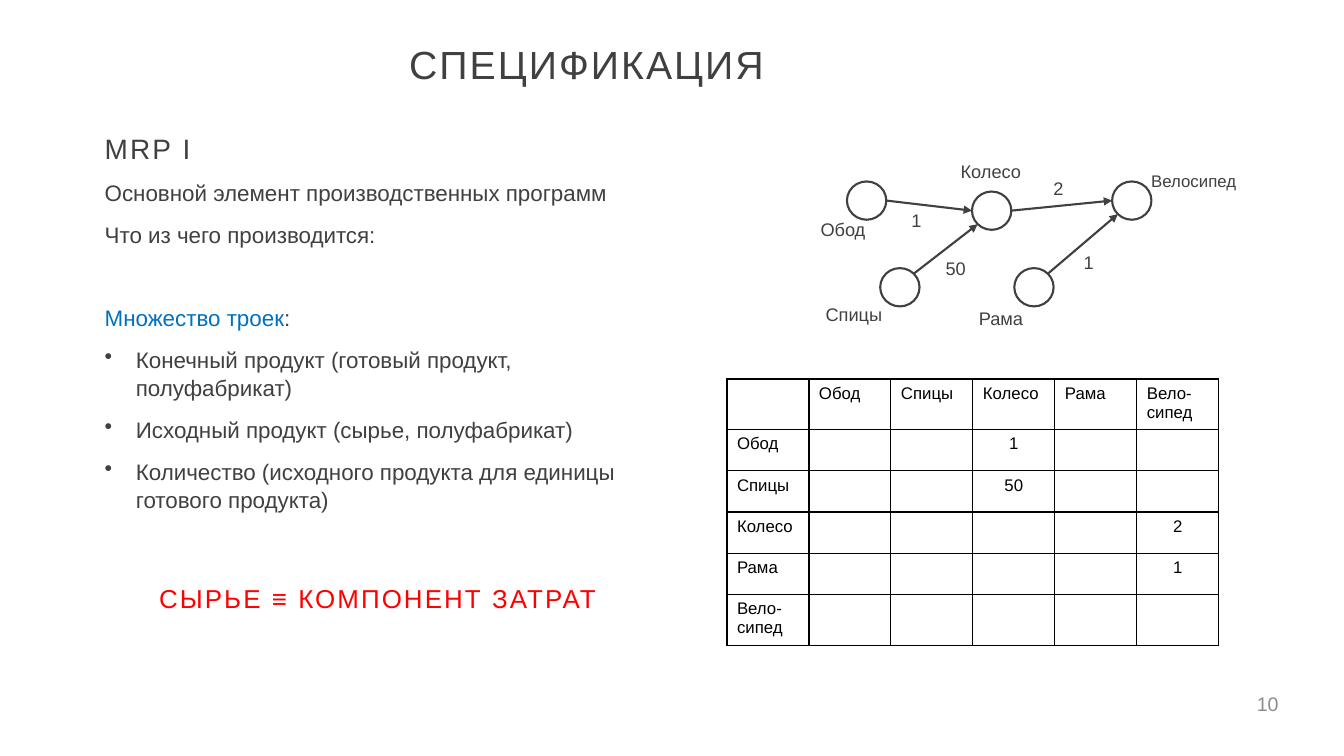
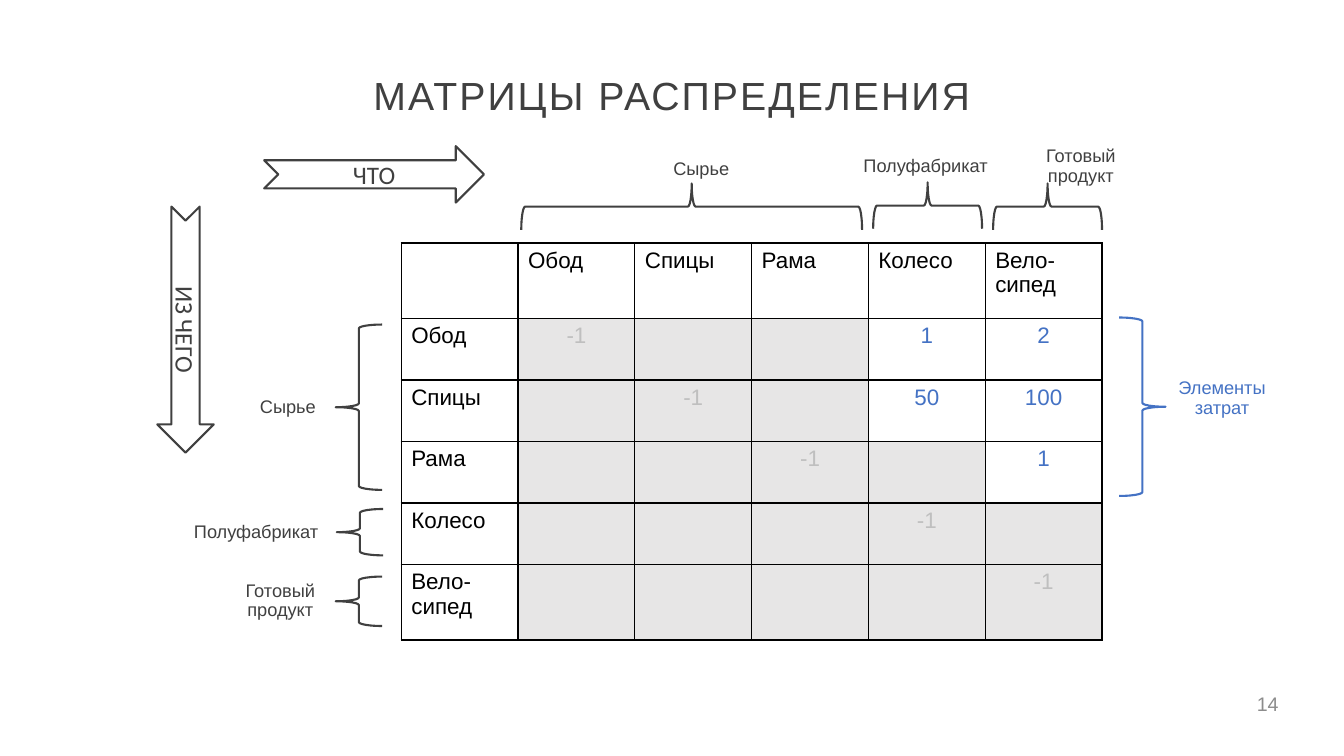
from math import cos, radians, sin

from lxml import etree
from pptx import Presentation
from pptx import util as u
from pptx.dml.color import RGBColor
from pptx.enum import shapes, text
from pptx.oxml import ns

WIDTH, HEIGHT = 13.33, 7.5
INK, BLACK, WHITE, GREY, BLUE = "404040", "000000", "FFFFFF", "E7E6E6", "4472C4"
LINK, RED, FAINT, FOOTER = "0070C0", "FF0000", "BFBFBF", "8C8C8C"
LEFT, CENTER, RIGHT = text.PP_ALIGN.LEFT, text.PP_ALIGN.CENTER, text.PP_ALIGN.RIGHT
KIND = shapes.MSO_SHAPE

# Specification slide
INTRO = ["Основной элемент производственных программ", "Что из чего производится:"]
TRIPLE_HEADING = [("Множество троек", LINK), (":", INK)]
TRIPLE = [
    "Конечный продукт (готовый продукт, полуфабрикат)",
    "Исходный продукт (сырье, полуфабрикат)",
    "Количество (исходного продукта для единицы готового продукта)",
]
NODE_SIZE = (0.39, 0.38)
# name: node left and top, label left, top and width, label size
NODES = {
    "Обод": ((8.4, 1.8), (8.04, 2.12, 0.73), 13),
    "Спицы": ((8.73, 2.66), (8.09, 2.96, 0.83), 13),
    "Колесо": ((9.64, 1.9), (9.43, 1.54, 0.83), 13),
    "Рама": ((10.06, 2.66), (9.61, 3, 0.83), 13),
    "Велосипед": ((11.03, 1.8), (11.32, 1.64, 1.07), 12),
}
# part, product, quantity, quantity left and top, angle at which the arrow leaves
EDGES = [
    ("Обод", "Колесо", "1", (8.94, 2.03), 0),
    ("Спицы", "Колесо", "50", (9.28, 2.5), 45),
    ("Рама", "Велосипед", "1", (10.65, 2.44), 45),
    ("Колесо", "Велосипед", "2", (10.35, 1.71), 0),
]
PARTS = ["Обод", "Спицы", "Колесо", "Рама", "Вело-сипед"]
PART_USE = {(0, 2): "1", (1, 2): "50", (2, 4): "2", (3, 4): "1"}

# Distribution slide
MATRIX_PARTS = ["Обод", "Спицы", "Рама", "Колесо", "Вело-сипед"]
COSTS = {(0, 3): "1", (0, 4): "2", (1, 3): "50", (1, 4): "100", (2, 4): "1"}
# visible box, rotation, colour
BRACES = [
    ((5.17, 1.82, 3.38, 0.46), 90, INK),
    ((8.66, 1.81, 1.08, 0.46), 90, INK),
    ((9.85, 1.82, 1.08, 0.46), 90, INK),
    ((11.1, 3.15, 0.46, 1.77), 180, BLUE),
    ((3.33, 3.22, 0.46, 1.64), 0, INK),
    ((3.34, 5.05, 0.46, 0.46), 0, INK),
    ((3.33, 5.72, 0.46, 0.49), 0, INK),
]
SHORT, LONG, DOUBLE = (0.93, 0.34), (1.58, 0.34), (1.34, 0.49)
# lines, left and top, size, colour
GROUPS = [
    (["Сырье"], (6.49, 1.51), SHORT, INK),
    (["Полуфабрикат"], (8.39, 1.48), LONG, INK),
    (["Готовый", "продукт"], (10.05, 1.41), DOUBLE, INK),
    (["Элементы затрат"], (11.45, 3.71), DOUBLE, BLUE),
    (["Сырье"], (2.39, 3.87), SHORT, INK),
    (["Полуфабрикат"], (1.75, 5.11), LONG, INK),
    (["Готовый", "продукт"], (2.11, 5.72), DOUBLE, INK),
]
ARROWS = [("ЧТО", (2.62, 1.45, 2.18, 0.56), 0), ("ИЗ ЧЕГО", (1.56, 2.05, 0.56, 2.44), 90)]


def color(value):
    return RGBColor.from_string(value)


def inches(values):
    return [u.Inches(value) for value in values]


def write(para, spans, size, ink=INK, align=LEFT, before=0, leading=None, spacing=0, font="Arial"):
    """Fill a paragraph with a string or with (words, colour) spans."""
    para.alignment, para.space_before = align, u.Pt(before)
    if leading:
        para.line_spacing = leading
    para.font.name, para.font.size = font, u.Pt(size)
    para.font.color.rgb = color(ink)
    for words, span_ink in [(spans, None)] if isinstance(spans, str) else spans:
        span = para.add_run()
        span.text = words
        if span_ink:
            span.font.color.rgb = color(span_ink)
        if spacing:
            span._r.get_or_add_rPr().set("spc", str(int(spacing * 100)))


def add_text(page, box, lines, size, anchor=text.MSO_ANCHOR.TOP, **style):
    frame = page.shapes.add_textbox(*inches(box)).text_frame
    frame.word_wrap, frame.vertical_anchor = True, anchor
    for index, line in enumerate(lines):
        para = frame.add_paragraph() if index else frame.paragraphs[0]
        write(para, line, size, **style)
    return frame


def add_outline(page, kind, box, rotation=0, ink=INK):
    """Add a white outlined shape that covers box once it is rotated."""
    left, top, width, height = box
    if rotation == 90:
        left, top = left + (width - height) / 2, top + (height - width) / 2
        width, height = height, width
    shape = page.shapes.add_shape(kind, *inches((left, top, width, height)))
    shape.rotation = rotation
    shape.shadow.inherit = False
    shape.fill.solid()
    shape.fill.fore_color.rgb = color(WHITE)
    shape.line.color.rgb, shape.line.width = color(ink), u.Pt(1.5)
    return shape


def add_arrow(page, start, end):
    arrow = page.shapes.add_connector(shapes.MSO_CONNECTOR.STRAIGHT, *inches(start + end))
    arrow.line.color.rgb, arrow.line.width = color(INK), u.Pt(1.5)
    etree.SubElement(arrow.line._get_or_add_ln(), ns.qn("a:tailEnd"), type="triangle")
    etree.SubElement(arrow._element.spPr, ns.qn("a:effectLst"))


def add_borders(cell):
    properties = cell._tc.get_or_add_tcPr()
    for side in ("lnL", "lnR", "lnT", "lnB"):
        border = etree.SubElement(properties, ns.qn(f"a:{side}"), w=str(u.Pt(1)))
        fill = etree.SubElement(border, ns.qn("a:solidFill"))
        etree.SubElement(fill, ns.qn("a:srgbClr"), val=BLACK)


def add_matrix(page, box, row_heights, parts, size, body):
    """Add a parts-by-parts table; body(row, column) gives words, ink and fill."""
    count = len(parts) + 1
    table = page.shapes.add_table(count, count, *inches(box)).table
    table.first_row = table.horz_banding = False
    names = [""] + parts
    for row, height in enumerate(row_heights):
        table.rows[row].height = u.Inches(height)
        table.columns[row].width = u.Inches(box[2] / count)
        for column in range(count):
            cell = table.cell(row, column)
            inner = row > 0 and column > 0
            if inner:
                words, ink, fill = body(row - 1, column - 1)
            else:
                words, ink, fill = names[row or column], BLACK, WHITE
            add_borders(cell)
            cell.fill.solid()
            cell.fill.fore_color.rgb = color(fill)
            write(cell.text_frame.paragraphs[0], words, size, ink, CENTER if inner else LEFT)


def part_use_cell(row, column):
    return PART_USE.get((row, column), ""), BLACK, WHITE


def cost_cell(row, column):
    if (row, column) in COSTS:
        return COSTS[row, column], BLUE, WHITE
    return "-1" if row == column else "", FAINT, GREY


def add_page(deck, title, title_box, align, number):
    page = deck.slides.add_slide(deck.slide_layouts[6])
    add_text(page, title_box, [title], 28, text.MSO_ANCHOR.BOTTOM,
             align=align, leading=0.9, spacing=1.5)
    add_text(page, (9.78, 6.78, 3, 0.4), [number], 14, text.MSO_ANCHOR.MIDDLE,
             ink=FOOTER, align=RIGHT)
    return page


def add_bullet(para):
    properties = para._p.get_or_add_pPr()
    indent = u.Inches(0.31)
    properties.set("marL", str(indent))
    properties.set("indent", str(-indent))
    bullet = etree.Element(ns.qn("a:buChar"), char="•")
    properties.find(ns.qn("a:defRPr")).addprevious(bullet)


def rim_point(name, angle):
    """Point on a node's outline, angle counted anticlockwise from the right."""
    (left, top), (width, height) = NODES[name][0], NODE_SIZE
    turn = radians(angle)
    return (left + width / 2 * (1 + cos(turn)), top + height / 2 * (1 - sin(turn)))


def build_specification(deck):
    page = add_page(deck, "СПЕЦИФИКАЦИЯ", (3.96, 0.26, 6.77, 0.66), LEFT, "10")
    add_text(page, (0.94, 1.32, 5.94, 0.4), ["MRP I"], 20, before=10, leading=0.8, spacing=1.5)
    frame = add_text(page, (0.94, 1.72, 5.5, 3.58), INTRO + [TRIPLE_HEADING] + TRIPLE, 16,
                     before=10, leading=1.04)
    frame.paragraphs[len(INTRO)].space_before = u.Pt(39)
    for para in frame.paragraphs[-len(TRIPLE):]:
        add_bullet(para)
    add_text(page, (1.37, 5.77, 4.75, 0.53), ["СЫРЬЕ ≡ КОМПОНЕНТ ЗАТРАТ"], 18.5,
             ink=RED, align=CENTER, before=10, leading=0.9, spacing=1.5)
    for name, (corner, label, size) in NODES.items():
        add_outline(page, KIND.FLOWCHART_CONNECTOR, corner + NODE_SIZE)
        add_text(page, label + (0.32,), [name], size, before=10)
    for part, product, quantity, corner, angle in EDGES:
        add_arrow(page, rim_point(part, angle), rim_point(product, angle + 180))
        add_text(page, corner + (0.48, 0.32), [quantity], 13, before=10)
    add_matrix(page, (7.21, 3.76, 4.88, 2.62), [0.41] * 6, PARTS, 12, part_use_cell)


def build_distribution(deck):
    page = add_page(deck, "МАТРИЦЫ РАСПРЕДЕЛЕНИЯ", (2.81, 0.57, 7.71, 0.66), CENTER, "14")
    add_matrix(page, (3.98, 2.41, 6.95, 3.93), [0.75] + [0.61] * 4 + [0.75],
               MATRIX_PARTS, 16, cost_cell)
    for box, rotation, ink in BRACES:
        add_outline(page, KIND.LEFT_BRACE, box, rotation, ink)
    for lines, corner, size, ink in GROUPS:
        spacing = {"leading": 0.9} if size == DOUBLE else {"before": 10}
        add_text(page, corner + size, lines, 13, ink=ink, align=CENTER, **spacing)
    for words, box, rotation in ARROWS:
        arrow = add_outline(page, KIND.NOTCHED_RIGHT_ARROW, box, rotation)
        arrow.text_frame.vertical_anchor = text.MSO_ANCHOR.MIDDLE
        write(arrow.text_frame.paragraphs[0], words, 18, align=CENTER, font="Calibri")


def main():
    deck = Presentation()
    deck.slide_width, deck.slide_height = inches((WIDTH, HEIGHT))
    build_specification(deck)
    build_distribution(deck)
    deck.save("out.pptx")


if __name__ == "__main__":
    main()
